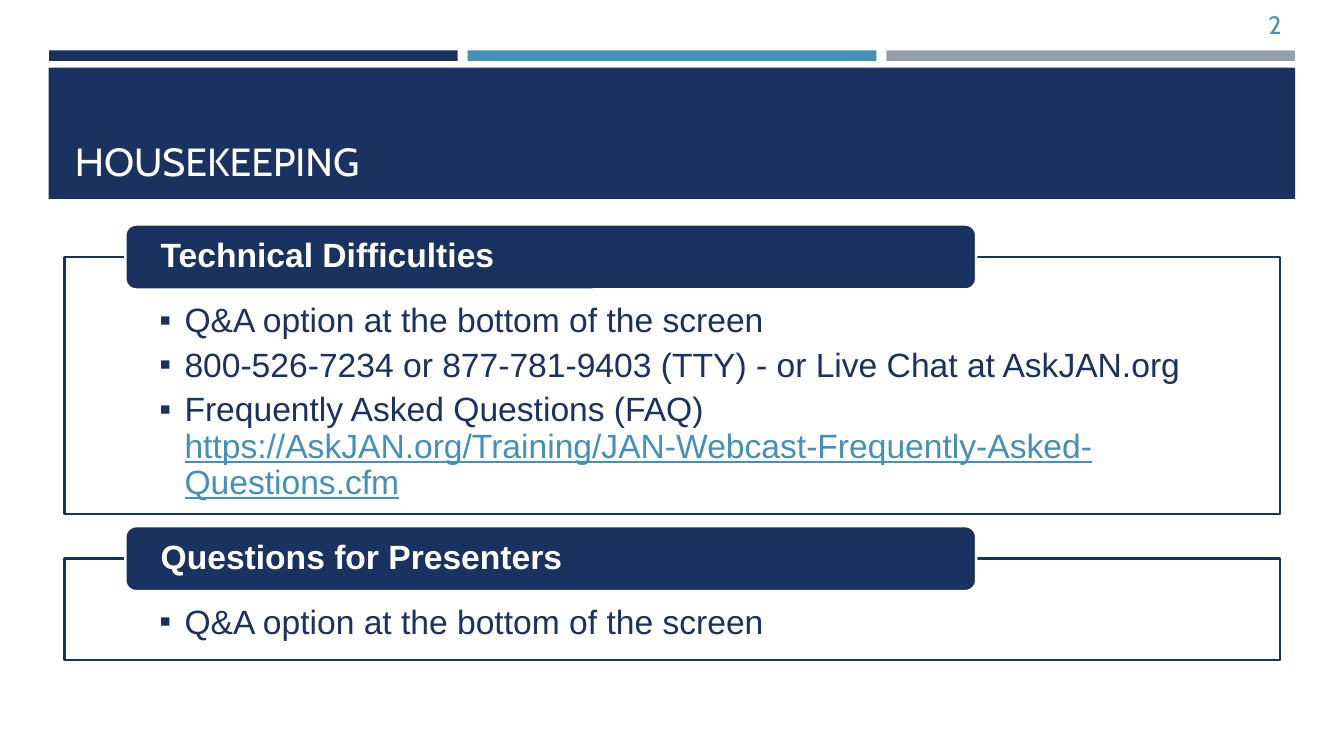
from lxml import etree
from pptx import Presentation
from pptx.dml.color import RGBColor
from pptx.enum.shapes import MSO_SHAPE
from pptx.enum.text import MSO_ANCHOR, PP_ALIGN
from pptx.oxml.ns import qn
from pptx.util import Inches, Pt

RECT, ROUND = MSO_SHAPE.RECTANGLE, MSO_SHAPE.ROUNDED_RECTANGLE
TOP, MID, LOW = MSO_ANCHOR.TOP, MSO_ANCHOR.MIDDLE, MSO_ANCHOR.BOTTOM
LEFT, RIGHT = PP_ALIGN.LEFT, PP_ALIGN.RIGHT
NAVY = RGBColor(0x1A, 0x32, 0x60)
BLUE = RGBColor(0x45, 0x90, 0xB8)
GRAY = RGBColor(0x96, 0x9F, 0xA7)
WHITE = RGBColor(0xFF, 0xFF, 0xFF)
CREAM = RGBColor(0xFF, 0xFE, 0xFF)
WIDE, HIGH = Inches(13.33), Inches(7.5)
COL, ROW = WIDE / 100, HIGH / 100

HEAD = {"name": "Cabin", "size": Pt(28)}
PAGE = {"name": "Cabin", "size": Pt(18)}
LABEL = {"name": "Arial", "size": Pt(24), "bold": True}
BODY = {"name": "Arial", "size": Pt(24)}
LINK = {**BODY, "underline": True}
ASK = "Q&A option at the bottom of the screen"
HELP = [
    [ASK],
    ["800-526-7234 or 877-781-9403 (TTY) - or Live Chat at AskJAN.org"],
    ["Frequently Asked Questions (FAQ)",
     "https://AskJAN.org/Training/JAN-Webcast-Frequently-Asked-Questions.cfm"],
]


def place(box):
    """Turn a box in columns and rows into slide lengths."""
    left, top, width, height = box
    return [round(n) for n in (left * COL, top * ROW, width * COL, height * ROW)]


def block(slide, kind, box, fill, line=None):
    """Add a flat shape with a fill and an optional outline."""
    shape = slide.shapes.add_shape(kind, *place(box))
    shape.shadow.inherit = False
    shape.fill.solid()
    shape.fill.fore_color.rgb = fill
    if line is None:
        shape.line.fill.background()
    else:
        shape.line.color.rgb = line
        shape.line.width = Pt(1.75)
    return shape


def setup(shape, anchor, insets):
    """Set the wrap, anchor and insets of a shape and return its text frame."""
    frame = shape.text_frame
    sides = ("margin_left", "margin_top", "margin_right", "margin_bottom")
    values = dict(zip(sides, map(Inches, insets)))
    values.update(word_wrap=True, vertical_anchor=anchor)
    for key, value in values.items():
        setattr(frame, key, value)
    return frame


def write(para, text, style, color):
    """Add a run with the given font values."""
    run = para.add_run()
    run.text = text
    for key, value in style.items():
        setattr(run.font, key, value)
    run.font.color.rgb = color


def phrase(frame, text, style, color, align=LEFT):
    """Write one line of text in a frame."""
    para = frame.paragraphs[0]
    para.alignment = align
    para.line_spacing = 0.9
    write(para, text, style, color)


def bullet(para):
    """Give a paragraph a square bullet, a hanging indent and spacing."""
    para.alignment = LEFT
    para.line_spacing = 0.9
    para.space_after = Pt(6)
    props = para._p.get_or_add_pPr()
    props.set("marL", str(Inches(0.25)))
    props.set("indent", str(-Inches(0.25)))
    etree.SubElement(props, qn("a:buFont")).set("typeface", "Arial")
    etree.SubElement(props, qn("a:buChar")).set("char", "▪")


def stripes(slide, box):
    """Draw three equal bars with even gaps."""
    left, top, width, height = box
    gap = 0.75
    part = (width - 2 * gap) / 3
    for i, color in enumerate((NAVY, BLUE, GRAY)):
        block(slide, RECT, (left + i * (part + gap), top, part, height), color)


def banner(slide, box, title):
    """Draw the title band."""
    shape = block(slide, RECT, box, NAVY)
    frame = setup(shape, LOW, (0.26, 0.1, 0.26, 0.14))
    phrase(frame, title, HEAD, CREAM)


def number(slide, box, text):
    """Write the page number."""
    frame = setup(slide.shapes.add_textbox(*place(box)), MID, (0.1, 0.05, 0.1, 0.05))
    phrase(frame, text, PAGE, BLUE, RIGHT)


def section(slide, box, title, items):
    """Draw an outlined list with a label across its top edge."""
    left, top, width, height = box
    panel = block(slide, RECT, box, WHITE, NAVY)
    frame = setup(panel, TOP, (0.94, 0.46, 0.94, 0.19))
    for i, (text, *links) in enumerate(items):
        para = frame.add_paragraph() if i else frame.paragraphs[0]
        bullet(para)
        write(para, text, BODY, NAVY)
        for link in links:
            para.add_line_break()
            write(para, link, LINK, BLUE)
    tall = 8.6
    area = (left + width * 0.05, top - tall / 2, width * 0.7, tall)
    tab = block(slide, ROUND, area, NAVY, WHITE)
    phrase(setup(tab, MID, (0.32, 0, 0.32, 0)), title, LABEL, WHITE)


def main():
    """Build and save the slide."""
    deck = Presentation()
    deck.slide_width, deck.slide_height = WIDE, HIGH
    slide = deck.slides.add_slide(deck.slide_layouts[6])
    stripes(slide, (3.65, 6.67, 92.7, 1.4))
    banner(slide, (3.62, 8.95, 92.75, 17.35), "HOUSEKEEPING")
    number(slide, (87.47, 0.8, 8.63, 5.33), "2")
    top = 34
    for title, items, height in (
        ("Technical Difficulties", HELP, 34),
        ("Questions for Presenters", [[ASK]], 13.4),
    ):
        section(slide, (4.8, top, 90.45, height), title, items)
        top += height + 5.9
    deck.save("out.pptx")


if __name__ == "__main__":
    main()
